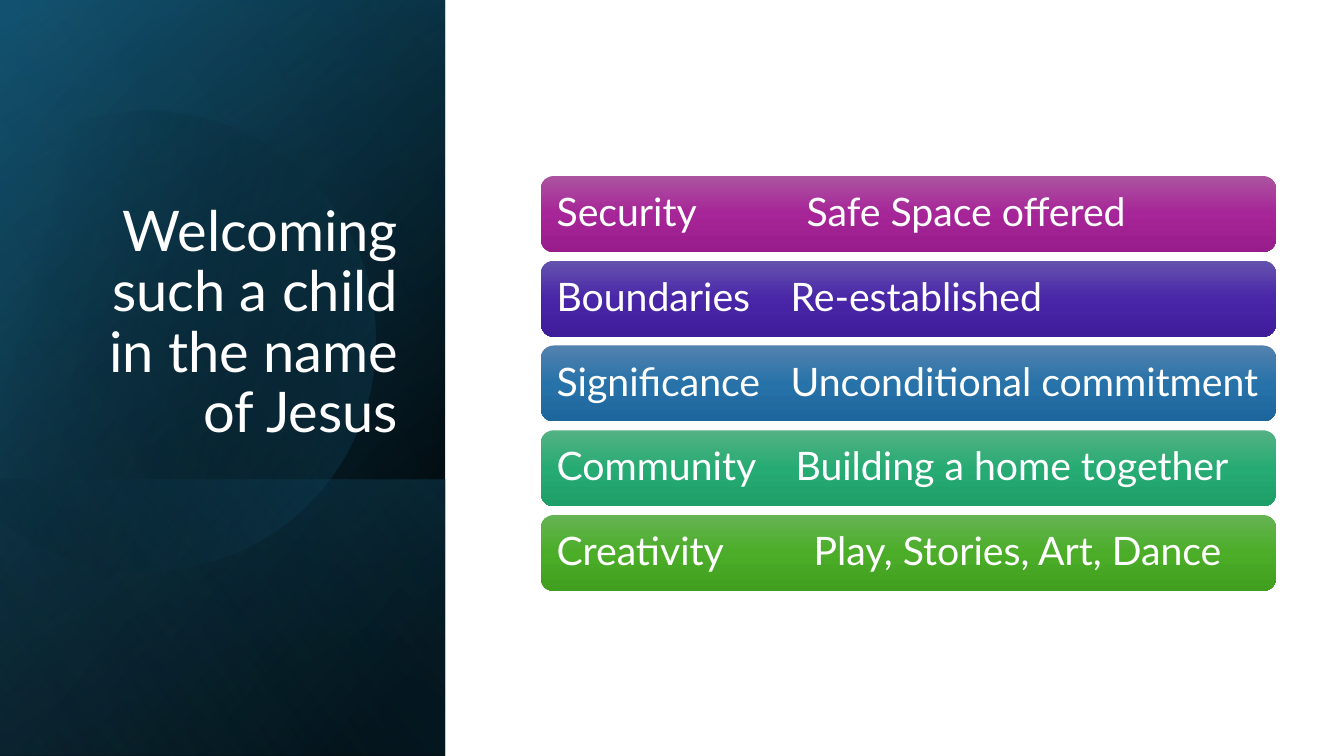
import math

from lxml import etree
from pptx import Presentation
from pptx import util as u
from pptx.dml.color import RGBColor
from pptx.enum import shapes, text
from pptx.oxml import ns

PX = 12192000 / 1344
FONT = "Lato"
WHITE = RGBColor(0xFF, 0xFF, 0xFF)
BLACK = RGBColor(0x00, 0x00, 0x00)
TEAL = RGBColor(0x15, 0x60, 0x82)
DEEP_TEAL = RGBColor(0x10, 0x48, 0x62)
SKY = RGBColor(0x46, 0xB1, 0xE1)
PURPLES = [RGBColor(0xAC, 0x53, 0xA0), RGBColor(0xA6, 0x25, 0x98), RGBColor(0x99, 0x1C, 0x8B)]
INDIGOS = [RGBColor(0x65, 0x53, 0xAE), RGBColor(0x49, 0x26, 0xA8), RGBColor(0x3E, 0x1C, 0x9A)]
BLUES = [RGBColor(0x53, 0x82, 0xAF), RGBColor(0x27, 0x72, 0xA9), RGBColor(0x1D, 0x66, 0x9C)]
JADES = [RGBColor(0x54, 0xB1, 0x83), RGBColor(0x27, 0xAB, 0x74), RGBColor(0x1E, 0x9E, 0x68)]
GREENS = [RGBColor(0x66, 0xB3, 0x54), RGBColor(0x4B, 0xAD, 0x28), RGBColor(0x40, 0x9F, 0x1E)]

GIFTS = [
    ("Security", "Safe Space offered", 250, PURPLES),
    ("Boundaries", "Re-established", 234, INDIGOS),
    ("Significance", "Unconditional commitment", 234, BLUES),
    ("Community", "Building a home together", 239, JADES),
    ("Creativity", "Play, Stories, Art, Dance", 257, GREENS),
]

DISC_BOX = (-55, 107, 430, 461)
DISC_TURN = 343.9
DISC_START = (150, 111)
DISC_EDGES = [
    [(248, 113), (338, 178), (366, 277)],
    [(401, 400), (331, 527), (209, 562)],
    [(132, 585), (53, 565), (-3, 518)],
    [(-15, 507)],
    [(-15, 176)],
    [(0, 162)],
    [(23, 143), (50, 129), (81, 120)],
    [(104, 114), (127, 111), (150, 111)],
]


def px(length):
    return u.Emu(round(length * PX))


def add_gradient(shape, stops, angle):
    shape.shadow.inherit = False
    shape.line.fill.background()
    shape.fill.gradient()
    gradient = shape.fill._xPr.find(ns.qn("a:gradFill"))
    gradient.set("rotWithShape", "1")
    for part in list(gradient):
        gradient.remove(part)
    stop_list = etree.SubElement(gradient, ns.qn("a:gsLst"))
    for position, color, opacity in stops:
        stop = etree.SubElement(stop_list, ns.qn("a:gs"), pos=str(position * 1000))
        tint = etree.SubElement(stop, ns.qn("a:srgbClr"), val=str(color))
        if opacity < 100:
            etree.SubElement(tint, ns.qn("a:alpha"), val=str(opacity * 1000))
    etree.SubElement(gradient, ns.qn("a:lin"), ang=str(angle * 60000), scaled="0")


def add_veil(slide, box, stops, angle):
    left, top, width, height = box
    veil = slide.shapes.add_shape(
        shapes.MSO_SHAPE.RECTANGLE,
        px(left + (width - height) / 2), px(top + (height - width) / 2), px(height), px(width))
    veil.rotation = 90
    veil._element.spPr.find(ns.qn("a:xfrm")).set("flipH", "1")
    add_gradient(veil, stops, angle)


def unturned(point):
    left, top, width, height = DISC_BOX
    x, y = point[0] - left - width / 2, point[1] - top - height / 2
    turn = math.radians(360 - DISC_TURN)
    return (round(width / 2 + x * math.cos(turn) - y * math.sin(turn)),
            round(height / 2 + x * math.sin(turn) + y * math.cos(turn)))


def add_disc(slide, left, top):
    edges = [[unturned(point) for point in edge] for edge in DISC_EDGES]
    builder = slide.shapes.build_freeform(*unturned(DISC_START), scale=PX)
    builder.add_line_segments([edge[-1] for edge in edges], close=True)
    disc = builder.convert_to_shape()
    x, y, width, height = DISC_BOX
    disc.left, disc.top, disc.width, disc.height = map(px, (left + x, top + y, width, height))
    disc.rotation = DISC_TURN
    outline = next(disc._element.iter(ns.qn("a:path")))
    outline.set("w", str(width))
    outline.set("h", str(height))
    for part in list(outline):
        outline.remove(part)
    for edge in [[unturned(DISC_START)]] + edges:
        kind = "a:cubicBezTo" if len(edge) == 3 else "a:lnTo" if len(outline) else "a:moveTo"
        step = etree.SubElement(outline, ns.qn(kind))
        for across, down in edge:
            etree.SubElement(step, ns.qn("a:pt"), x=str(across), y=str(down))
    etree.SubElement(outline, ns.qn("a:close"))
    add_gradient(disc, [(29, BLACK, 0), (100, TEAL, 43)], 30)


def add_title_panel(slide, box):
    left, top, width, height = box
    add_veil(slide, box, [(8, BLACK, 100), (100, DEEP_TEAL, 100)], 50)
    add_veil(slide, box, [(0, BLACK, 0), (99, TEAL, 46)], 30)
    add_veil(slide, (left, top + 480, width, height - 480), [(2, TEAL, 29), (100, BLACK, 30)], 130)
    add_disc(slide, left, top)
    add_veil(slide, box, [(0, BLACK, 0), (99, SKY, 11)], 120)

    title = slide.shapes.title
    slide.shapes._spTree.append(title._element)
    title.left, title.top = px(left + 64), px(top + 186)
    title.width, title.height = px(width - 101), px(264)
    frame = title.text_frame
    frame.word_wrap = True
    frame.auto_size = text.MSO_AUTO_SIZE.NONE
    frame.vertical_anchor = text.MSO_ANCHOR.BOTTOM
    heading = frame.paragraphs[0]
    heading.alignment = text.PP_ALIGN.RIGHT
    heading.line_spacing = 0.9
    add_run(heading, "Welcoming such a child in the name of Jesus", 40)


def add_run(paragraph, words, size):
    run = paragraph.add_run()
    run.text = words
    run.font.name = FONT
    run.font.size = u.Pt(size)
    run.font.color.rgb = WHITE


def add_gift_bar(slide, box, gift):
    name, meaning, tab, colors = gift
    bar = slide.shapes.add_shape(shapes.MSO_SHAPE.ROUNDED_RECTANGLE, *map(px, box))
    add_gradient(bar, [(i * 50, color, 100) for i, color in enumerate(colors)], 90)
    frame = bar.text_frame
    frame.word_wrap = True
    frame.vertical_anchor = text.MSO_ANCHOR.MIDDLE
    frame.margin_left = frame.margin_top = frame.margin_bottom = px(12)
    frame.margin_right = px(6)
    line = frame.paragraphs[0]
    line.alignment = text.PP_ALIGN.LEFT
    line.line_spacing = 0.9
    tabs = etree.SubElement(line._p.get_or_add_pPr(), ns.qn("a:tabLst"))
    etree.SubElement(tabs, ns.qn("a:tab"), pos=str(px(tab)), algn="l")
    add_run(line, name + "\t", 28)
    add_run(line, meaning, 28)


def add_gift_list(slide, box, bar_height=76):
    left, top, width, height = box
    pitch = (height - bar_height) / (len(GIFTS) - 1)
    for row, gift in enumerate(GIFTS):
        add_gift_bar(slide, (left, top + row * pitch, width, bar_height), gift)


def main():
    deck = Presentation()
    deck.slide_width, deck.slide_height = px(1344), px(756)
    slide = deck.slides.add_slide(deck.slide_layouts[5])
    slide.background.fill.solid()
    slide.background.fill.fore_color.rgb = WHITE
    add_title_panel(slide, (0, 0, 445, 756))
    add_gift_list(slide, (541, 176, 735, 415))
    deck.save("out.pptx")


if __name__ == "__main__":
    main()
